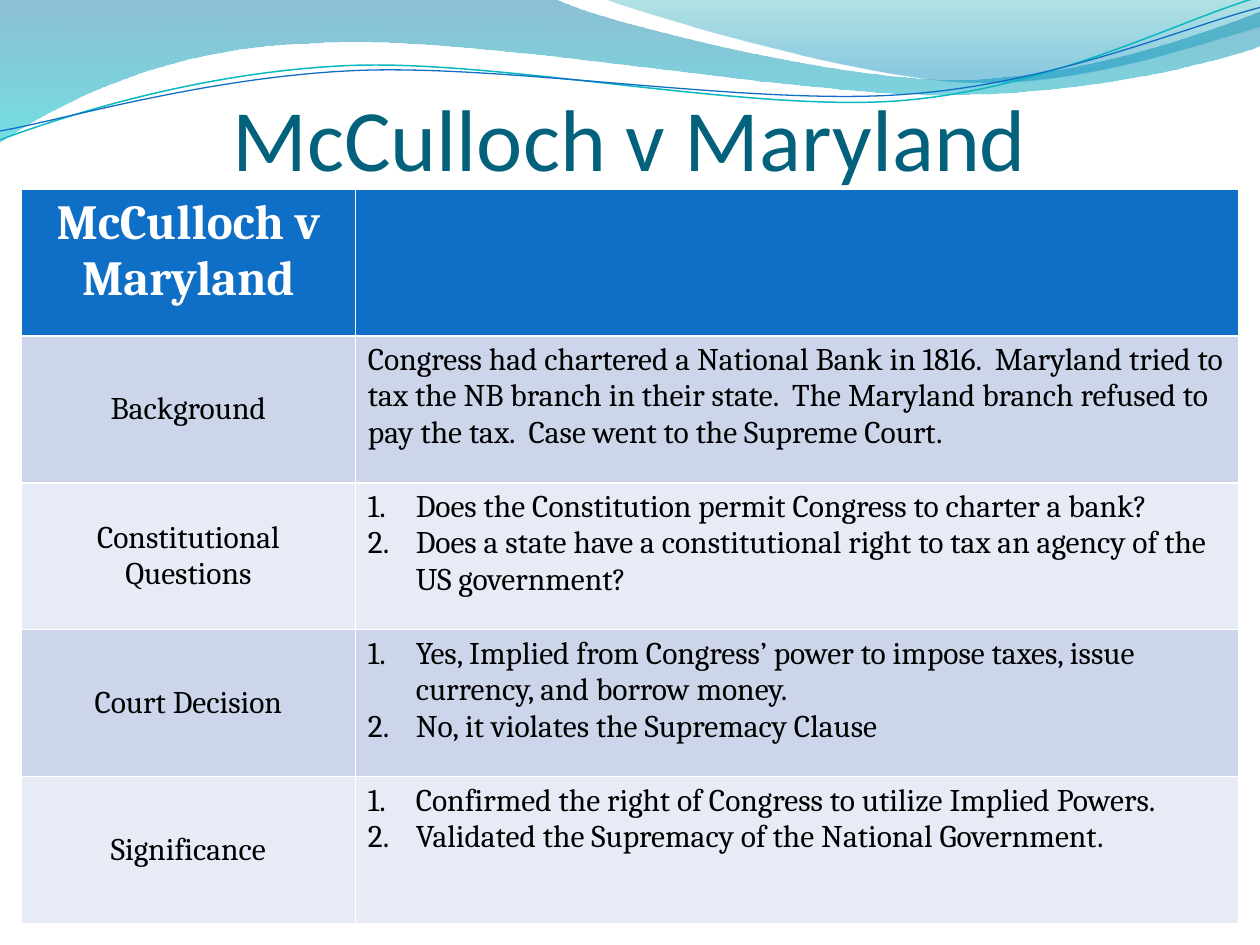
from dataclasses import dataclass
from math import cos, radians, sin
from typing import Optional

from lxml.etree import SubElement
from pptx import Presentation
from pptx.dml.color import RGBColor
from pptx.enum.text import MSO_ANCHOR, PP_ALIGN
from pptx.oxml.ns import qn
from pptx.util import Inches, Pt

Point = tuple[float, float]


@dataclass(frozen=True)
class Theme:
    title_font: str = "Calibri"
    body_font: str = "Cambria"
    title_size: int = 50
    header_size: int = 28
    body_size: int = 18
    title: str = "04617B"
    header: str = "0F6FC6"
    bands: tuple[str, str] = ("CCD5EA", "E7EBF5")
    text: str = "000000"
    white: str = "FFFFFF"


@dataclass(frozen=True)
class Stop:
    position: float
    color: str
    opacity: int


@dataclass(frozen=True)
class Wave:
    """A start point, then segments: one point is a line, three are a curve."""
    start: Point
    segments: list[tuple[Point, ...]]
    gradient: Optional[tuple[Stop, Stop]] = None
    line_color: str = ""
    line_width: float = 0
    center: Point = (0, 0)
    tilt: float = 0


@dataclass(frozen=True)
class Topic:
    label: str
    points: list[str]
    numbered: bool = True


THEME = Theme()

WAVES = [
    Wave((0, 0), [
        ((4.4, -0.01),),
        ((4.76, 0.17), (6.64, 0.63), (7.58, 0.63)),
        ((8.53, 0.63), (9.58, 0.26), (10, 0.09)),
        ((10.01, 0.36),),
        ((9.83, 0.44), (8.7, 0.76), (7.46, 0.75)),
        ((6.22, 0.75), (3.82, 0.28), (2.57, 0.34)),
        ((1.29, 0.36), (0.46, 0.83), (-0.01, 1.13)),
    ], gradient=(Stop(0, "0074A1", 45), Stop(1, "00C6CF", 55))),
    Wave((4.79, -0.01), [
        ((5.09, 0.11), (6.82, 0.62), (7.69, 0.65)),
        ((8.56, 0.69), (9.61, 0.32), (10, 0.21)),
        ((10, 0),),
    ], gradient=(Stop(0, "00A1A9", 30), Stop(0.8, "008BBF", 45))),
    Wave((0, 1.11), [
        ((0.48, 0.93), (1.58, 0.57), (2.77, 0.52)),
        ((3.95, 0.47), (5.93, 0.89), (7.13, 0.8)),
        ((8.33, 0.71), (9.38, 0.15), (9.98, -0.02)),
    ], line_color="0AB8BF", line_width=0.85, center=(4.99, 0.58), tilt=-2.7),
    Wave((0, 1.04), [
        ((0.47, 0.96), (1.64, 0.61), (2.83, 0.56)),
        ((4.03, 0.51), (5.97, 0.84), (7.17, 0.75)),
        ((8.36, 0.67), (9.41, 0.21), (10, 0.06)),
    ], line_color="0F6FC6", line_width=0.75, center=(5, 0.59), tilt=-2.7),
]

CASE = "McCulloch v Maryland"
TOPICS = [
    Topic("Background", [
        "Congress had chartered a National Bank in 1816.  Maryland tried to tax "
        "the NB branch in their state.  The Maryland branch refused to pay the "
        "tax.  Case went to the Supreme Court."], numbered=False),
    Topic("Constitutional Questions", [
        "Does the Constitution permit Congress to charter a bank?",
        "Does a state have a constitutional right to tax an agency of the US government?"]),
    Topic("Court Decision", [
        "Yes, Implied from Congress’ power to impose taxes, issue currency, and borrow money.",
        "No, it violates the Supremacy Clause"]),
    Topic("Significance", [
        "Confirmed the right of Congress to utilize Implied Powers.",
        "Validated the Supremacy of the National Government."]),
]


def rgb(color: str) -> RGBColor:
    return RGBColor.from_string(color)


def level(point: Point, wave: Wave) -> tuple[int, int]:
    """Undo the wave's tilt, which the shape's rotation puts back."""
    angle = radians(-wave.tilt)
    x, y = point[0] - wave.center[0], point[1] - wave.center[1]
    return (Inches(wave.center[0] + x * cos(angle) - y * sin(angle)),
            Inches(wave.center[1] + x * sin(angle) + y * cos(angle)))


def bend_curves(ribbon, wave: Wave) -> None:
    """Join each three-point segment of the outline into one cubic curve."""
    lines = iter(list(ribbon.element.spPr.iter(qn("a:lnTo"))))
    for segment in wave.segments:
        first, *others = [next(lines) for _ in segment]
        if others:
            first.tag = qn("a:cubicBezTo")
        for line in others:
            first.append(line[0])
            line.getparent().remove(line)


def draw_wave(slide, wave: Wave, depth: int) -> None:
    builder = slide.shapes.build_freeform(*level(wave.start, wave))
    builder.add_line_segments(
        [level(point, wave) for segment in wave.segments for point in segment],
        close=wave.gradient is not None)
    ribbon = builder.convert_to_shape()
    bend_curves(ribbon, wave)
    ribbon.rotation = wave.tilt
    ribbon.shadow.inherit = False
    if wave.gradient:
        ribbon.line.fill.background()
        ribbon.fill.gradient()
        ribbon.fill.gradient_angle = 270
        for stop, spec in zip(ribbon.fill.gradient_stops, wave.gradient):
            stop.position = spec.position
            stop.color.rgb = rgb(spec.color)
        for color, spec in zip(ribbon.element.spPr.iter(qn("a:srgbClr")), wave.gradient):
            SubElement(color, qn("a:alpha"), val=str(spec.opacity * 1000))
    else:
        ribbon.fill.background()
        ribbon.line.color.rgb = rgb(wave.line_color)
        ribbon.line.width = Pt(wave.line_width)
    # Waves sit behind the title, after the tree's two property elements
    slide.shapes.element.insert(2 + depth, ribbon.element)


def add_text(paragraph, text: str, font: str, size: int, color: str, bold: bool = False) -> None:
    run = paragraph.add_run()
    run.text = text
    run.font.name = font
    run.font.size = Pt(size)
    run.font.bold = bold
    run.font.color.rgb = rgb(color)


def fill_row(row, color: str) -> None:
    for cell in row.cells:
        cell.fill.solid()
        cell.fill.fore_color.rgb = rgb(color)


def number_paragraph(paragraph) -> None:
    properties = paragraph._p.get_or_add_pPr()
    properties.set("marL", str(Inches(0.38)))
    properties.set("indent", str(-Inches(0.38)))
    SubElement(properties, qn("a:buAutoNum"), type="arabicPeriod")


def fill_topic(label_cell, detail_cell, topic: Topic) -> None:
    label_cell.vertical_anchor = MSO_ANCHOR.MIDDLE
    label = label_cell.text_frame.paragraphs[0]
    label.alignment = PP_ALIGN.CENTER
    add_text(label, topic.label, THEME.body_font, THEME.body_size, THEME.text)
    details = detail_cell.text_frame
    for index, point in enumerate(topic.points):
        paragraph = details.add_paragraph() if index else details.paragraphs[0]
        if topic.numbered:
            number_paragraph(paragraph)
        add_text(paragraph, point, THEME.body_font, THEME.body_size, THEME.text)


def draw_case_table(slide) -> None:
    # The default table style supplies the white rules between cells
    table = slide.shapes.add_table(len(TOPICS) + 1, 2, Inches(0.17), Inches(1.5),
                                   Inches(9.66), Inches(5.83)).table
    for column, width in zip(table.columns, (2.65, 7.01)):
        column.width = Inches(width)
    # Header row
    fill_row(table.rows[0], THEME.header)
    heading = table.cell(0, 0).text_frame.paragraphs[0]
    heading.alignment = PP_ALIGN.CENTER
    add_text(heading, CASE, THEME.body_font, THEME.header_size, THEME.white, bold=True)
    # Banded topic rows
    for row, topic in enumerate(TOPICS, start=1):
        fill_row(table.rows[row], THEME.bands[(row - 1) % 2])
        fill_topic(table.cell(row, 0), table.cell(row, 1), topic)


def draw_title(slide) -> None:
    title = slide.shapes.title
    title.left, title.top = Inches(0.5), Inches(0.58)
    title.width, title.height = Inches(9), Inches(0.92)
    frame = title.text_frame
    frame.vertical_anchor = MSO_ANCHOR.BOTTOM
    frame.margin_left = frame.margin_right = frame.margin_bottom = 0
    frame.margin_top = Inches(0.05)
    frame.paragraphs[0].alignment = PP_ALIGN.CENTER
    add_text(frame.paragraphs[0], CASE, THEME.title_font, THEME.title_size, THEME.title)


def main() -> None:
    deck = Presentation()
    deck.slide_width, deck.slide_height = Inches(10), Inches(7.5)
    slide = deck.slides.add_slide(deck.slide_layouts[5])
    for depth, wave in enumerate(WAVES):
        draw_wave(slide, wave, depth)
    draw_title(slide)
    draw_case_table(slide)
    deck.save("out.pptx")


if __name__ == "__main__":
    main()
